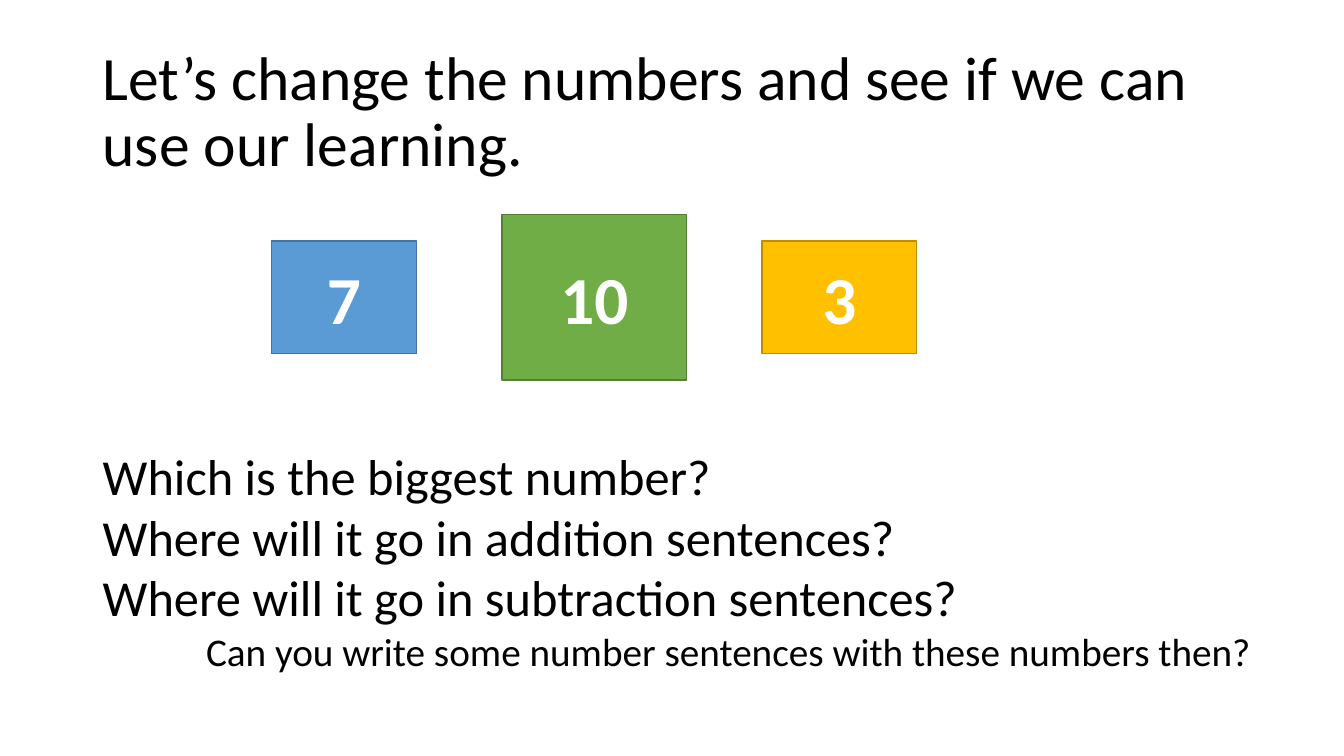
"""Build a slide asking pupils to write number sentences with 7, 10 and 3."""
from pptx import Presentation
from pptx.dml.color import RGBColor
from pptx.enum.shapes import MSO_SHAPE
from pptx.enum.text import MSO_ANCHOR, PP_ALIGN
from pptx.util import Inches, Pt

RECTANGLE = MSO_SHAPE.RECTANGLE
TOP, MIDDLE = MSO_ANCHOR.TOP, MSO_ANCHOR.MIDDLE
LEFT, CENTER, RIGHT = PP_ALIGN.LEFT, PP_ALIGN.CENTER, PP_ALIGN.RIGHT


def color(value):
    return RGBColor.from_string(value)


def write_lines(shape, lines, anchor, text_color="000000", bold=False, spacing=1.0):
    frame = shape.text_frame
    frame.word_wrap = True
    frame.vertical_anchor = anchor
    for index, (text, size, alignment) in enumerate(lines):
        paragraph = frame.add_paragraph() if index else frame.paragraphs[0]
        paragraph.alignment = alignment
        paragraph.line_spacing = spacing
        run = paragraph.add_run()
        run.text = text
        font_format = {"name": "Calibri", "size": Pt(size), "bold": bold}
        for name, value in font_format.items():
            setattr(run.font, name, value)
        run.font.color.rgb = color(text_color)


presentation = Presentation()
presentation.slide_width = Inches(13.33)
presentation.slide_height = Inches(7.5)
slide = presentation.slides.add_slide(presentation.slide_layouts[6])

title = slide.shapes.add_textbox(Inches(0.92), Inches(0.4), Inches(11.5), Inches(1.45))
title_text = "Let’s change the numbers and see if we can use our learning."
write_lines(title, [(title_text, 44, LEFT)], MIDDLE, spacing=0.9)

CARD_CENTER = 2.95
number_cards = [
    ("7", 2.69, 1.44, 1.12, "5B9BD5", "43739E"),
    ("10", 4.98, 1.83, 1.64, "70AD47", "538035"),
    ("3", 7.56, 1.53, 1.12, "FFC000", "BD8E00"),
]
for number, left, width, height, fill, line in number_cards:
    card = slide.shapes.add_shape(
        RECTANGLE, Inches(left), Inches(CARD_CENTER - height / 2), Inches(width), Inches(height)
    )
    card.shadow.inherit = False
    card.fill.solid()
    card.fill.fore_color.rgb = color(fill)
    card.line.color.rgb = color(line)
    card.line.width = Pt(1)
    write_lines(card, [(number, 48, CENTER)], MIDDLE, "FFFFFF", bold=True)

questions = slide.shapes.add_textbox(Inches(0.92), Inches(4.37), Inches(11.58), Inches(2.39))
question_lines = [
    ("Which is the biggest number?", 36, LEFT),
    ("Where will it go in addition sentences?", 36, LEFT),
    ("Where will it go in subtraction sentences?", 36, LEFT),
    ("Can you write some number sentences with these numbers then?", 28, RIGHT),
]
write_lines(questions, question_lines, TOP)

presentation.save("out.pptx")
